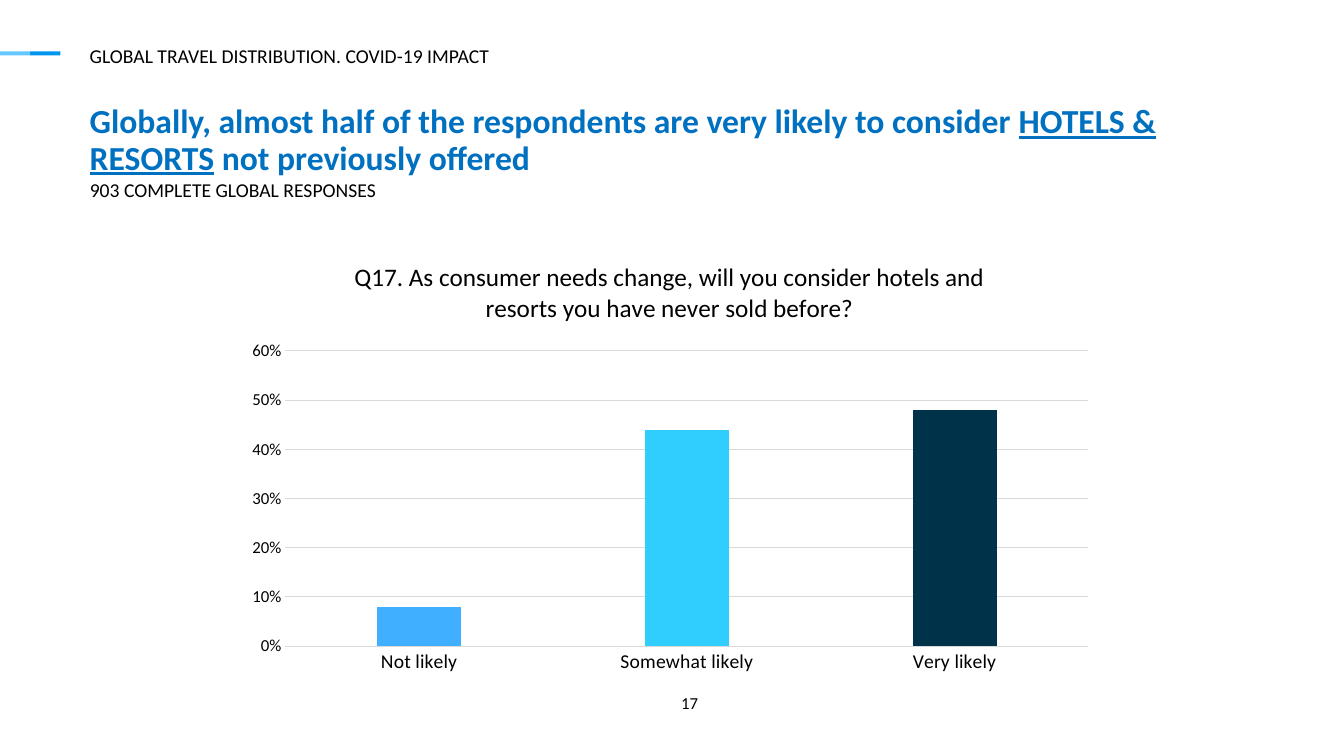
from dataclasses import dataclass

import pptx
import pptx.chart.data
import pptx.dml.color
import pptx.enum.chart
import pptx.enum.shapes
import pptx.enum.text
import pptx.oxml
import pptx.oxml.ns
import pptx.util
from pptx.util import Inches

FONT = "Calibri"
COLORS = {
    "accent": "0096F0",
    "accent_light": "64C8FF",
    "heading": "0070C0",
    "text": "000000",
    "grid": "D9D9D9",
    "not_likely": "40AFFF",
    "somewhat_likely": "30CDFF",
    "very_likely": "003249",
}
ALIGN = pptx.enum.text.PP_ALIGN
ANCHOR = pptx.enum.text.MSO_ANCHOR


@dataclass
class Span:
    text: str
    underline: bool = False


@dataclass
class Label:
    left: float
    top: float
    width: float
    height: float
    spans: list[Span]
    size: int = 14
    color: str = "text"
    bold: bool = False
    inset: float = 0
    line_spacing: float = 1.0
    align: ALIGN = ALIGN.LEFT
    anchor: ANCHOR = ANCHOR.TOP


@dataclass
class Bar:
    left: float
    color: str


@dataclass
class Answer:
    name: str
    share: float
    color: str


BARS = [Bar(0.3, "accent"), Bar(0, "accent_light")]
LABELS = [
    Label(0.89, 1.04, 11.53, 0.57, [
        Span("Globally, almost half of the respondents are very likely to consider "),
        Span("HOTELS & RESORTS", underline=True),
        Span(" not previously offered"),
    ], size=24, color="heading", bold=True, line_spacing=0.9),
    Label(0.89, 0.44, 11.5, 0.23, [Span("GLOBAL TRAVEL DISTRIBUTION. COVID-19 IMPACT")],
          anchor=ANCHOR.MIDDLE),
    Label(0.89, 1.77, 10.99, 0.33, [Span("903 COMPLETE GLOBAL RESPONSES")]),
    Label(5.34, 6.82, 3, 0.4, [Span("17")], size=12, inset=0.05, align=ALIGN.CENTER),
]
QUESTION = ("Q17. As consumer needs change, will you consider hotels and "
            "resorts you have never sold before?")
ANSWERS = [
    Answer("Not likely", 0.08, "not_likely"),
    Answer("Somewhat likely", 0.44, "somewhat_likely"),
    Answer("Very likely", 0.48, "very_likely"),
]


def rgb(name: str) -> pptx.dml.color.RGBColor:
    return pptx.dml.color.RGBColor.from_string(COLORS[name])


def style_font(font, size: int, color: str = "text", bold: bool = False) -> None:
    font.name = FONT
    font.size = pptx.util.Pt(size)
    font.bold = bold
    font.color.rgb = rgb(color)


def style_line(line) -> None:
    line.color.rgb = rgb("grid")
    line.width = pptx.util.Pt(0.75)


def draw_bar(page, bar: Bar) -> None:
    shape = page.shapes.add_shape(pptx.enum.shapes.MSO_SHAPE.RECTANGLE,
                                  Inches(bar.left), Inches(0.51), Inches(0.3), Inches(0.04))
    shape.shadow.inherit = False
    shape.fill.solid()
    shape.fill.fore_color.rgb = rgb(bar.color)
    shape.line.fill.background()


def draw_label(page, label: Label) -> None:
    box = page.shapes.add_textbox(Inches(label.left), Inches(label.top),
                                  Inches(label.width), Inches(label.height))
    frame = box.text_frame
    frame.word_wrap = True
    frame.vertical_anchor = label.anchor
    frame.margin_left = frame.margin_right = Inches(label.inset)
    frame.margin_top = frame.margin_bottom = Inches(label.inset)
    para = frame.paragraphs[0]
    para.alignment = label.align
    para.line_spacing = label.line_spacing
    for span in label.spans:
        run = para.add_run()
        run.text = span.text
        style_font(run.font, label.size, label.color, label.bold)
        if span.underline:
            run.font.underline = True


def set_plot_layout(chart, x: float, y: float, w: float, h: float) -> None:
    """Fix the inner plot area, in fractions of the chart."""
    plot_area = chart.plots[0]._element.getparent()
    for old in plot_area.findall(pptx.oxml.ns.qn("c:layout")):
        plot_area.remove(old)
    modes = '<c:layoutTarget val="inner"/><c:xMode val="edge"/><c:yMode val="edge"/>'
    sizes = f'<c:x val="{x}"/><c:y val="{y}"/><c:w val="{w}"/><c:h val="{h}"/>'
    plot_area.insert(0, pptx.oxml.parse_xml(
        f'<c:layout {pptx.oxml.ns.nsdecls("c")}><c:manualLayout>'
        f'{modes}{sizes}</c:manualLayout></c:layout>'))


def draw_chart(page, answers: list[Answer]) -> None:
    data = pptx.chart.data.CategoryChartData(number_format="0%")
    data.categories = [answer.name for answer in answers]
    data.add_series("Series 1", [answer.share for answer in answers])
    chart = page.shapes.add_chart(
        pptx.enum.chart.XL_CHART_TYPE.COLUMN_CLUSTERED,
        Inches(2.31), Inches(2.39), Inches(8.66), Inches(4.37), data).chart
    style_font(chart.font, 10)
    chart.has_legend = False

    # Question as chart title
    chart.has_title = True
    span = chart.chart_title.text_frame.paragraphs[0].add_run()
    span.text = QUESTION
    style_font(span.font, 18)
    chart.chart_title.include_in_layout = False

    # Columns
    plot = chart.plots[0]
    plot.vary_by_categories = False
    plot.gap_width = 219
    plot.overlap = -27
    series = plot.series[0]
    series.format.fill.solid()
    series.format.fill.fore_color.rgb = rgb("very_likely")
    for index, answer in enumerate(answers):
        fill = series.points[index].format.fill
        fill.solid()
        fill.fore_color.rgb = rgb(answer.color)

    # Axes
    for axis, size in ((chart.category_axis, 14), (chart.value_axis, 12)):
        axis.major_tick_mark = axis.minor_tick_mark = pptx.enum.chart.XL_TICK_MARK.NONE
        style_font(axis.tick_labels.font, size)
    style_line(chart.category_axis.format.line)
    values = chart.value_axis
    values.minimum_scale, values.maximum_scale, values.major_unit = 0, 0.6, 0.1
    values.tick_labels.number_format = "0%"
    values.tick_labels.number_format_is_linked = False
    values.format.line.fill.background()
    values.has_major_gridlines = True
    style_line(values.major_gridlines.format.line)
    set_plot_layout(chart, 0.06, 0.25, 0.92, 0.67)


def main() -> None:
    deck = pptx.Presentation()
    deck.slide_width, deck.slide_height = Inches(13.33), Inches(7.5)
    page = deck.slides.add_slide(deck.slide_layouts[6])
    for bar in BARS:
        draw_bar(page, bar)
    for label in LABELS:
        draw_label(page, label)
    draw_chart(page, ANSWERS)
    deck.save("out.pptx")


if __name__ == "__main__":
    main()
